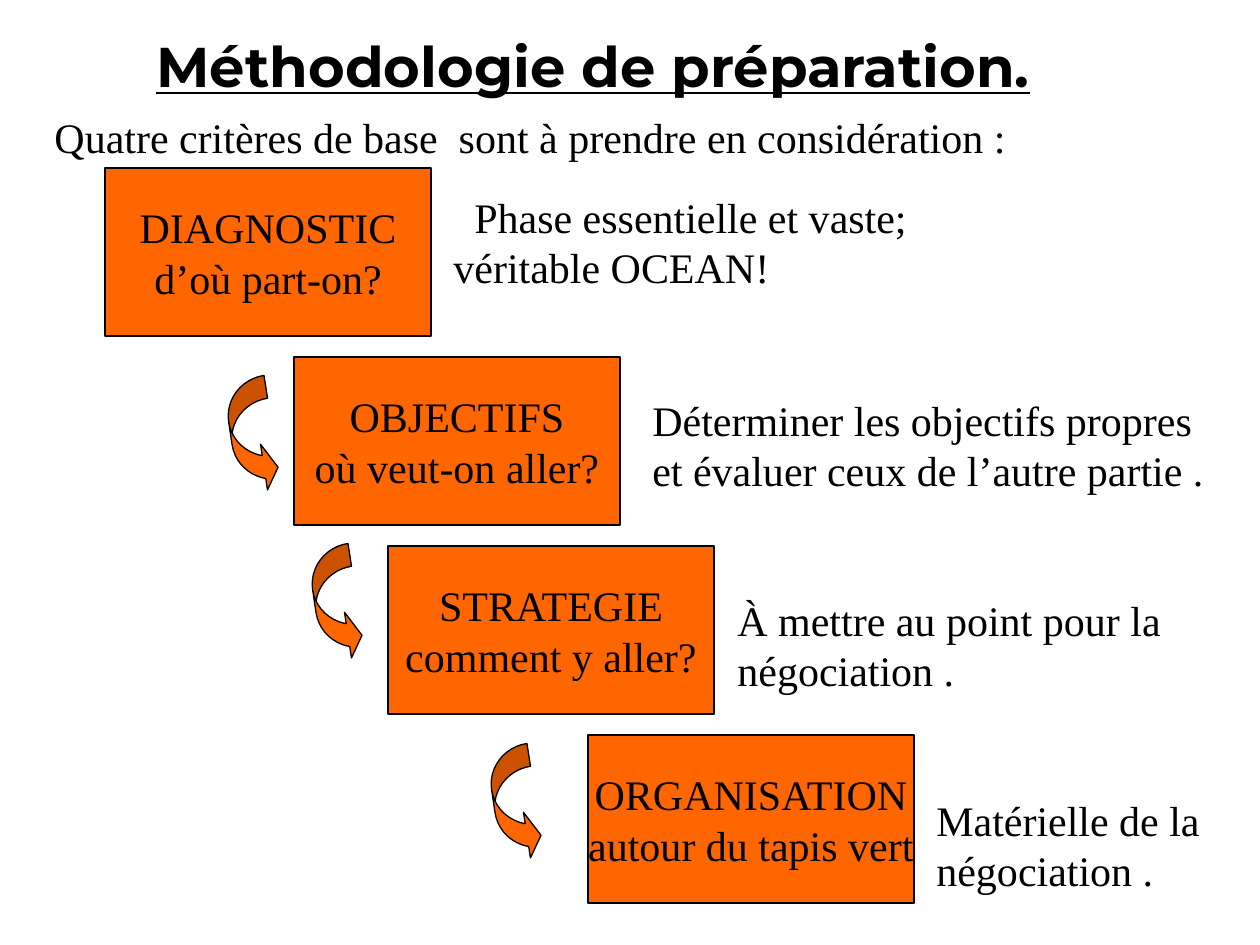
from dataclasses import dataclass

from pptx import Presentation
from pptx.dml.color import RGBColor
from pptx.enum.shapes import MSO_SHAPE
from pptx.enum.text import MSO_ANCHOR, MSO_AUTO_SIZE, PP_ALIGN
from pptx.shapes.autoshape import Shape
from pptx.slide import Slide
from pptx.text.text import TextFrame
from pptx.util import Emu, Pt

PIXELS_PER_INCH = 126


@dataclass(frozen=True)
class Theme:
    orange: RGBColor = RGBColor(0xFF, 0x66, 0x00)
    black: RGBColor = RGBColor(0, 0, 0)
    title_font: str = "Montserrat"
    body_font: str = "Times New Roman"
    title_size: int = 32
    body_size: int = 24
    line_width: float = 0.75


@dataclass(frozen=True)
class Step:
    name: str
    question: str
    left: int
    note: str
    note_left: int
    note_top: int
    note_width: int
    note_indent: int = 0


@dataclass(frozen=True)
class Arrow:
    left: int
    top: int


THEME = Theme()
FIRST_STEP_TOP, STEP_PITCH = 168, 189
STEP_WIDTH, STEP_HEIGHT = 326, 168
NOTE_HEIGHT = 113
ARROW_WIDTH, ARROW_HEIGHT, ARROW_ROTATION = 42, 116, 351.3
ARROW_ADJUSTMENTS = (0.55, 1.1, 0.33)

STEPS = (
    Step("DIAGNOSTIC", "d’où part-on?", 105,
         "Phase essentielle et vaste; véritable OCEAN!", 441, 185, 496, 21),
    Step("OBJECTIFS", "où veut-on aller?", 294,
         "Déterminer les objectifs propres et évaluer ceux de l’autre partie .", 640, 388, 578),
    Step("STRATEGIE", "comment y aller?", 388,
         "À mettre au point pour la négociation .", 725, 588, 473),
    Step("ORGANISATION", "autour du tapis vert", 588,
         "Matérielle de la négociation .", 924, 788, 305),
)
ARROWS = (Arrow(231, 378), Arrow(315, 546), Arrow(494, 746))


def px(length: int) -> Emu:
    """Turn pixels into EMU."""
    return Emu(round(length * 914400 / PIXELS_PER_INCH))


def format_text(text_frame: TextFrame, font_name: str, size: int) -> None:
    """Give every run the same font, size and black colour."""
    for paragraph in text_frame.paragraphs:
        for run in paragraph.runs:
            run.font.name = font_name
            run.font.size = Pt(size)
            run.font.color.rgb = THEME.black


def add_title(slide: Slide, text: str) -> None:
    """Place the underlined title in its placeholder."""
    title = slide.shapes.title
    title.left, title.top, title.width, title.height = px(21), px(32), px(1145), px(73)
    text_frame = title.text_frame
    text_frame.text = text
    text_frame.auto_size = MSO_AUTO_SIZE.NONE
    text_frame.vertical_anchor = MSO_ANCHOR.BOTTOM
    paragraph = text_frame.paragraphs[0]
    paragraph.alignment = PP_ALIGN.CENTER
    format_text(text_frame, THEME.title_font, THEME.title_size)
    paragraph.runs[0].font.bold = True
    paragraph.runs[0].font.underline = True


def add_text(slide: Slide, text: str, left: int, top: int, width: int, height: int,
             indent: int = 0) -> None:
    """Add a wrapped text box with an optional first-line indent."""
    text_frame = slide.shapes.add_textbox(px(left), px(top), px(width), px(height)).text_frame
    text_frame.text = text
    text_frame.word_wrap = True
    text_frame.auto_size = MSO_AUTO_SIZE.SHAPE_TO_FIT_TEXT
    if indent:
        text_frame.paragraphs[0]._p.get_or_add_pPr().set("indent", str(px(indent)))
    format_text(text_frame, THEME.body_font, THEME.body_size)


def add_orange_shape(slide: Slide, preset: MSO_SHAPE, left: int, top: int,
                     width: int, height: int) -> Shape:
    """Add an orange preset shape with a thin black outline."""
    shape = slide.shapes.add_shape(preset, px(left), px(top), px(width), px(height))
    shape.shadow.inherit = False
    shape.fill.solid()
    shape.fill.fore_color.rgb = THEME.orange
    shape.line.color.rgb = THEME.black
    shape.line.width = Pt(THEME.line_width)
    return shape


def add_step(slide: Slide, step: Step, top: int) -> None:
    """Add a step rectangle and its note."""
    rectangle = add_orange_shape(slide, MSO_SHAPE.RECTANGLE, step.left, top,
                                 STEP_WIDTH, STEP_HEIGHT)
    text_frame = rectangle.text_frame
    text_frame.text = f"{step.name}\n{step.question}"
    text_frame.word_wrap = False
    text_frame.vertical_anchor = MSO_ANCHOR.MIDDLE
    for paragraph in text_frame.paragraphs:
        paragraph.alignment = PP_ALIGN.CENTER
    format_text(text_frame, THEME.body_font, THEME.body_size)
    add_text(slide, step.note, step.note_left, step.note_top, step.note_width,
             NOTE_HEIGHT, step.note_indent)


def add_arrow(slide: Slide, arrow: Arrow) -> None:
    """Add a tilted curved arrow leading to the next step."""
    shape = add_orange_shape(slide, MSO_SHAPE.CURVED_RIGHT_ARROW, arrow.left, arrow.top,
                             ARROW_WIDTH, ARROW_HEIGHT)
    shape.rotation = ARROW_ROTATION
    for index, value in enumerate(ARROW_ADJUSTMENTS):
        shape.adjustments[index] = value


def main() -> None:
    """Build and save the slide."""
    presentation = Presentation()
    presentation.slide_width, presentation.slide_height = px(1260), px(945)
    slide = presentation.slides.add_slide(presentation.slide_layouts[5])
    add_title(slide, "Méthodologie de préparation.")
    add_text(slide, "Quatre critères de base  sont à prendre en considération :",
             42, 105, 1113, 63)
    for index, step in enumerate(STEPS):
        add_step(slide, step, FIRST_STEP_TOP + index * STEP_PITCH)
    for arrow in ARROWS:
        add_arrow(slide, arrow)
    presentation.save("out.pptx")


if __name__ == "__main__":
    main()
